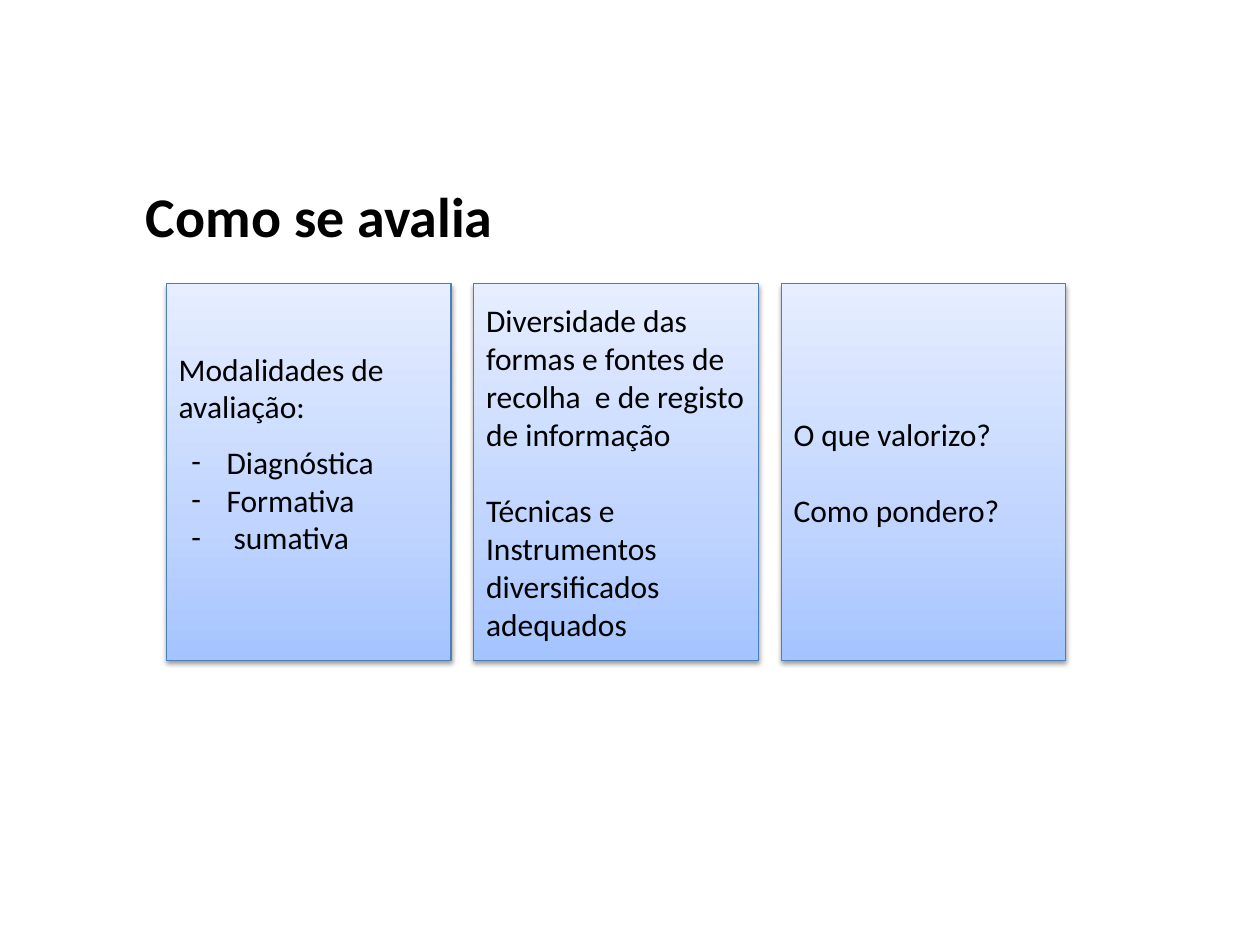
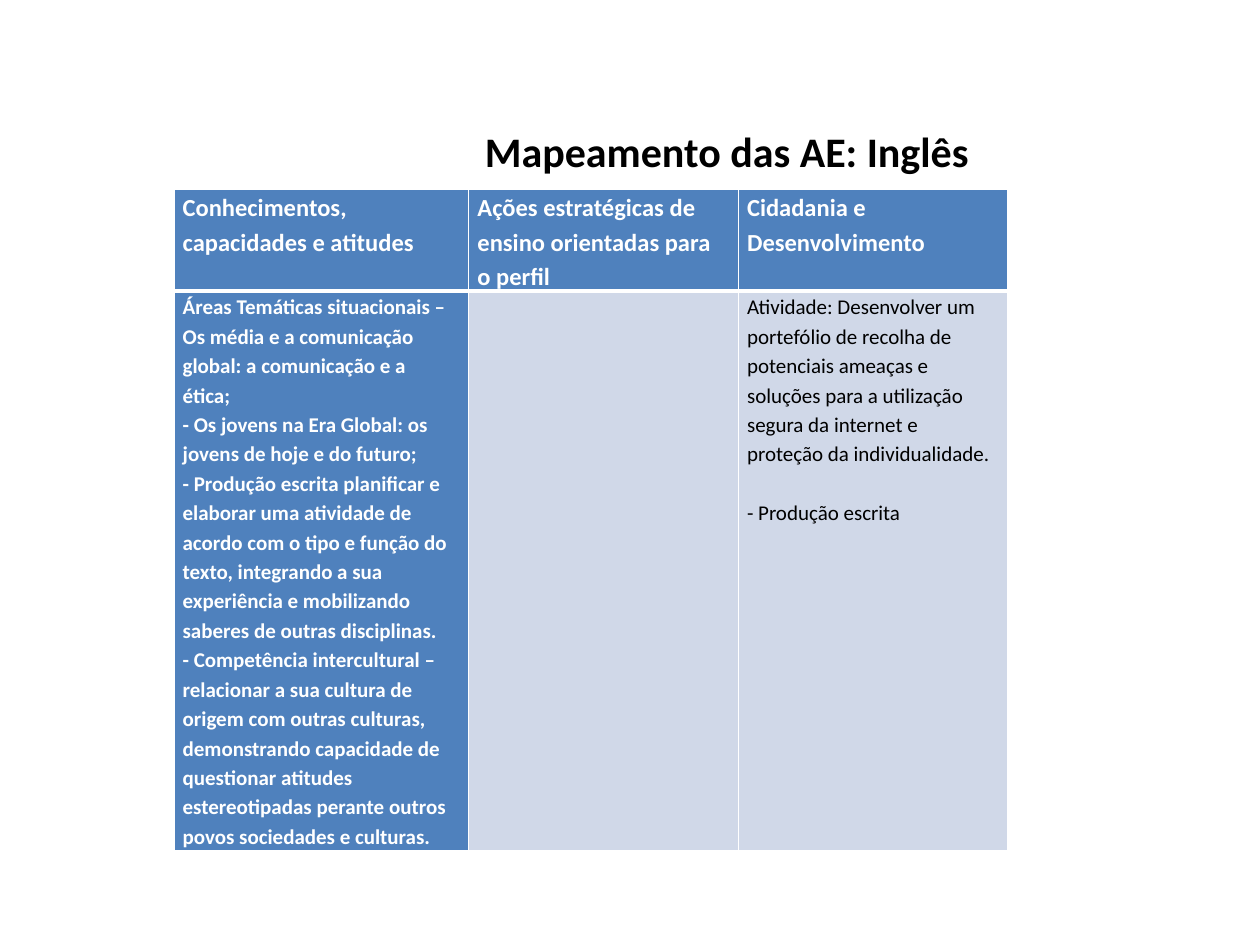
from lxml import etree
from pptx import Presentation
from pptx.dml.color import RGBColor
from pptx.enum.shapes import MSO_SHAPE
from pptx.enum.text import MSO_ANCHOR, PP_ALIGN
from pptx.oxml.ns import qn
from pptx.util import Inches, Pt

RECTANGLE = MSO_SHAPE.RECTANGLE
MIDDLE, TOP = MSO_ANCHOR.MIDDLE, MSO_ANCHOR.TOP
LEFT = PP_ALIGN.LEFT

FONT = "Calibri"
BLACK, WHITE = "000000", "FFFFFF"
BLUE, PALE_BLUE, CARD_LINE = "4F81BD", "D0D8E8", "4B7EBC"
CARD_STOPS = [(0, "A4C4FF"), (35, "BFD4FF"), (100, "E6EEFF")]

CARD_LEFT, CARD_TOP, CARD_WIDTH, CARD_HEIGHT, CARD_STEP = 1.32, 2.25, 2.26, 2.99, 2.44
CARD_SIZE, CARD_GAP = 18, 22
CARDS = [
    [("Modalidades de avaliação:", 0, False), ("Diagnóstica", 10, True),
     ("Formativa", 0, True), (" sumativa", 0, True)],
    [("Diversidade das formas e fontes de recolha  e de registo de informação", 0, False),
     ("Técnicas e Instrumentos diversificados adequados", CARD_GAP, False)],
    [("O que valorizo?", 0, False), ("Como pondero?", CARD_GAP, False)],
]
CARD_BOTTOM_INSETS = [0.35, 0.05, 0.05]

COLUMN_WIDTHS = [2.34, 2.14, 2.14]
ROW_HEIGHTS = [0.81, 4.44]
HEADINGS = ["Conhecimentos, capacidades e atitudes",
            "Ações estratégicas de ensino orientadas para o perfil",
            "Cidadania e Desenvolvimento"]
KNOWLEDGE = [
    "Áreas Temáticas situacionais – Os média e a comunicação global: a comunicação e a ética;",
    "- Os jovens na Era Global: os jovens de hoje e do futuro;",
    "- Produção escrita planificar e elaborar uma atividade de acordo com o tipo e função do "
    "texto, integrando a sua experiência e mobilizando saberes de outras disciplinas.",
    "- Competência intercultural – relacionar a sua cultura de origem com outras culturas, "
    "demonstrando capacidade de questionar atitudes estereotipadas perante outros povos "
    "sociedades e culturas.",
]
CITIZENSHIP = [
    "Atividade: Desenvolver um portefólio de recolha de potenciais ameaças e soluções para a "
    "utilização segura da internet e proteção da individualidade.",
    "- Produção escrita",
]


def color(value):
    """Turn a hex string into a colour."""
    return RGBColor.from_string(value)


def add_child(parent, tag, **attributes):
    """Append a drawing element with its attributes."""
    return etree.SubElement(parent, qn(tag), {key: str(value) for key, value in attributes.items()})


def next_paragraph(frame, index):
    """Return the first paragraph of a frame, or a new one."""
    return frame.add_paragraph() if index else frame.paragraphs[0]


def add_span(para, text, size, ink=BLACK, bold=False):
    """Add a formatted run to a paragraph."""
    span = para.add_run()
    span.text = text
    span.font.name = FONT
    span.font.size = Pt(size)
    span.font.bold = bold
    span.font.color.rgb = color(ink)


def add_title(page, text, left, top, width, height, size, wrap=True):
    """Add a bold black slide title."""
    box = page.shapes.add_textbox(Inches(left), Inches(top), Inches(width), Inches(height))
    box.text_frame.word_wrap = wrap
    add_span(box.text_frame.paragraphs[0], text, size, bold=True)


def fill_gradient(shape, stops):
    """Fill a shape with a gradient that rises from its bottom edge."""
    shape.fill.gradient()
    shape.fill.gradient_angle = 90
    stop_list = shape._element.spPr.find(qn("a:gradFill")).find(qn("a:gsLst"))
    for stop in list(stop_list):
        stop_list.remove(stop)
    for percent, value in stops:
        stop = add_child(stop_list, "a:gs", pos=percent * 1000)
        add_child(stop, "a:srgbClr", val=value)


def add_shadow(shape):
    """Give a shape a soft shadow below it."""
    shape.shadow.inherit = False
    effects = shape._element.spPr.find(qn("a:effectLst"))
    shadow = add_child(effects, "a:outerShdw", blurRad=Pt(3.1), dist=Pt(1.6),
                       dir=5400000, rotWithShape=0)
    shade = add_child(shadow, "a:srgbClr", val=BLACK)
    add_child(shade, "a:alpha", val=38000)


def set_dash_bullet(para):
    """Give a paragraph a hanging dash."""
    properties = para._p.get_or_add_pPr()
    properties.set("marL", str(Inches(0.38)))
    properties.set("indent", str(Inches(-0.28)))
    add_child(properties, "a:buFont", typeface=FONT)
    add_child(properties, "a:buChar", char="-")


def add_card(page, left, lines, bottom_inset):
    """Add a gradient card with its lines of text."""
    card = page.shapes.add_shape(RECTANGLE, Inches(left), Inches(CARD_TOP),
                                 Inches(CARD_WIDTH), Inches(CARD_HEIGHT))
    fill_gradient(card, CARD_STOPS)
    card.line.color.rgb = color(CARD_LINE)
    card.line.width = Pt(0.75)
    add_shadow(card)
    frame = card.text_frame
    frame.word_wrap = True
    frame.vertical_anchor = MIDDLE
    frame.margin_bottom = Inches(bottom_inset)
    for index, (text, gap, bulleted) in enumerate(lines):
        para = next_paragraph(frame, index)
        para.alignment = LEFT
        if gap:
            para.space_before = Pt(gap)
        if bulleted:
            set_dash_bullet(para)
        add_span(para, text, CARD_SIZE)


def set_borders(cell, top_width, bottom_width):
    """Draw white borders around a table cell."""
    properties = cell._tc.get_or_add_tcPr()
    widths = {"a:lnL": 1, "a:lnR": 1, "a:lnT": top_width, "a:lnB": bottom_width}
    for index, (tag, width) in enumerate(widths.items()):
        border = add_child(properties, tag, w=Pt(width))
        add_child(add_child(border, "a:solidFill"), "a:srgbClr", val=WHITE)
        properties.insert(index, border)


def fill_cell(cell, lines, fill, size, ink, bold, top_width=3, bottom_width=1, gap=0):
    """Set the fill, borders and text of a table cell."""
    cell.fill.solid()
    cell.fill.fore_color.rgb = color(fill)
    set_borders(cell, top_width, bottom_width)
    cell.margin_left, cell.margin_right = Inches(0.07), Inches(0.1)
    cell.margin_top = cell.margin_bottom = 0
    cell.vertical_anchor = TOP
    for index, text in enumerate(lines):
        para = next_paragraph(cell.text_frame, index)
        para.line_spacing = 1.15
        if index and gap:
            para.space_before = Pt(gap)
        add_span(para, text, size, ink, bold)


def add_mapping_table(page):
    """Add the table that maps knowledge to actions and citizenship."""
    frame = page.shapes.add_table(len(ROW_HEIGHTS), len(COLUMN_WIDTHS), Inches(1.38), Inches(1.5),
                                  Inches(sum(COLUMN_WIDTHS)), Inches(sum(ROW_HEIGHTS)))
    table = frame.table
    table.horz_banding = False
    for column, width in zip(table.columns, COLUMN_WIDTHS):
        column.width = Inches(width)
    for row, height in zip(table.rows, ROW_HEIGHTS):
        row.height = Inches(height)
    for index, heading in enumerate(HEADINGS):
        fill_cell(table.cell(0, index), [heading], BLUE, 14, WHITE, True,
                  top_width=1, bottom_width=3)
    fill_cell(table.cell(1, 0), KNOWLEDGE, BLUE, 12, WHITE, True)
    fill_cell(table.cell(1, 1), [], PALE_BLUE, 12, BLACK, False)
    fill_cell(table.cell(1, 2), CITIZENSHIP, PALE_BLUE, 12, BLACK, False, gap=16.8)


def build_assessment_page(deck):
    """Build the slide on how assessment is done."""
    page = deck.slides.add_slide(deck.slide_layouts[6])
    add_title(page, "Como se avalia", 1.06, 1.39, 4.88, 0.64, 32)
    for index, (lines, inset) in enumerate(zip(CARDS, CARD_BOTTOM_INSETS)):
        add_card(page, CARD_LEFT + index * CARD_STEP, lines, inset)


def build_mapping_page(deck):
    """Build the slide with the mapping for English."""
    page = deck.slides.add_slide(deck.slide_layouts[6])
    add_mapping_table(page)
    add_title(page, "Mapeamento das AE: Inglês", 3.75, 0.95, 4.08, 0.81, 24, wrap=False)


def main():
    """Build and save the deck."""
    deck = Presentation()
    deck.slide_width, deck.slide_height = Inches(10), Inches(7.5)
    build_assessment_page(deck)
    build_mapping_page(deck)
    deck.save("out.pptx")


if __name__ == "__main__":
    main()
